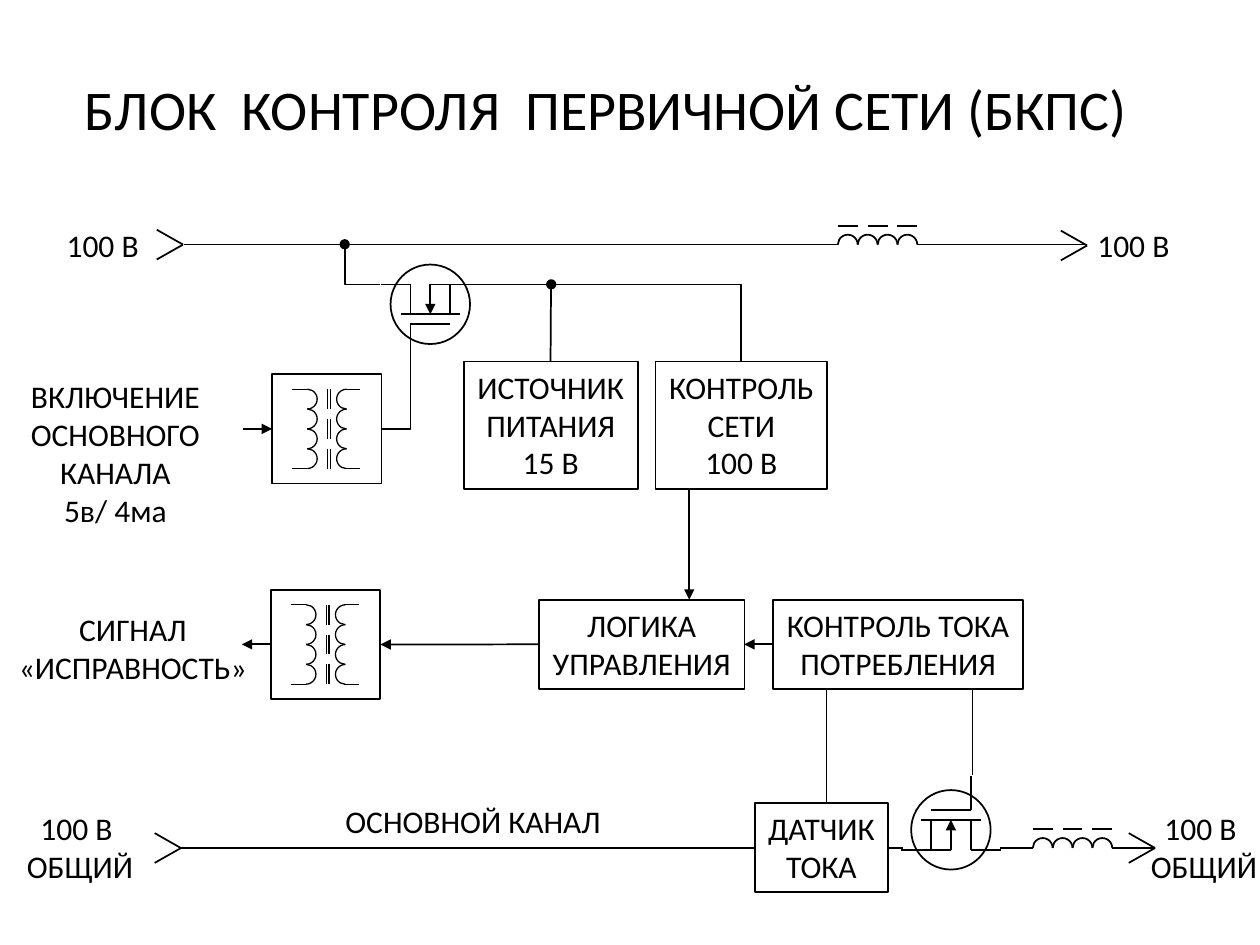
from dataclasses import dataclass

from lxml.etree import SubElement
from pptx import Presentation
from pptx.dml.color import RGBColor
from pptx.enum.shapes import MSO_CONNECTOR, MSO_SHAPE
from pptx.enum.text import MSO_ANCHOR, MSO_AUTO_SIZE, PP_ALIGN
from pptx.oxml.ns import qn
from pptx.util import Pt


@dataclass(frozen=True)
class Theme:
    font: str = "Calibri"
    ink: RGBColor = RGBColor(0, 0, 0)
    paper: RGBColor = RGBColor(255, 255, 255)
    title: float = 32
    body: float = 18
    thin: float = 0.75
    line: float = 1
    thick: float = 2


STEP = 11.35


class Board:
    def __init__(self, slide, theme):
        self.shapes = slide.shapes
        self.theme = theme

    def text(self, shape, lines, size, align=PP_ALIGN.CENTER):
        frame = shape.text_frame
        for at, words in enumerate(lines):
            para = frame.paragraphs[0] if at == 0 else frame.add_paragraph()
            para.alignment = align
            run = para.add_run()
            run.text = words
            run.font.name = self.theme.font
            run.font.size = Pt(size)
            run.font.color.rgb = self.theme.ink
        return frame

    def title(self, words, x, y, w, h):
        box = self.shapes.add_textbox(Pt(x), Pt(y), Pt(w), Pt(h))
        frame = self.text(box, [words], self.theme.title)
        frame.word_wrap = True
        frame.vertical_anchor = MSO_ANCHOR.MIDDLE

    def fit(self, shape, lines, align=PP_ALIGN.CENTER):
        frame = self.text(shape, lines, self.theme.body, align)
        frame.word_wrap = False
        frame.auto_size = MSO_AUTO_SIZE.SHAPE_TO_FIT_TEXT
        frame.vertical_anchor = MSO_ANCHOR.TOP

    def label(self, lines, x, y, w, h, align=PP_ALIGN.CENTER):
        box = self.shapes.add_textbox(Pt(x), Pt(y), Pt(w), Pt(h))
        self.fit(box, lines, align)

    def shape(self, kind, x, y, w, h, fill=None, width=None):
        item = self.shapes.add_shape(kind, Pt(x), Pt(y), Pt(w), Pt(h))
        item.shadow.inherit = False
        if fill is None:
            item.fill.background()
        else:
            item.fill.solid()
            item.fill.fore_color.rgb = fill
        item.line.color.rgb = self.theme.ink
        item.line.width = Pt(width or self.theme.line)
        return item

    def block(self, lines, x, y, w, h, fill=None):
        self.fit(self.shape(MSO_SHAPE.RECTANGLE, x, y, w, h, fill), lines)

    def line(self, x, y, x2, y2, width=None, head=False,
             kind=MSO_CONNECTOR.STRAIGHT):
        wire = self.shapes.add_connector(kind, Pt(x), Pt(y), Pt(x2), Pt(y2))
        wire.line.color.rgb = self.theme.ink
        wire.line.width = Pt(width or self.theme.line)
        props = wire._element.spPr
        if head:
            SubElement(props.find(qn("a:ln")), qn("a:tailEnd"),
                       type="triangle")
        SubElement(props, qn("a:effectLst"))
        return wire

    def bend(self, x, y, x2, y2):
        wire = self.line(x, y, x2, y2, kind=MSO_CONNECTOR.ELBOW)
        wire._element.spPr.find(qn("a:prstGeom")).set("prst", "bentConnector2")

    def arc(self, x, y, turn=0, width=None):
        item = self.shape(MSO_SHAPE.ARC, x, y, STEP, STEP, width=width)
        item.adjustments[0] = 108.165
        item.adjustments[1] = 0
        item.rotation = turn

    def dot(self, x, y):
        self.shape(MSO_SHAPE.OVAL, x - 1.9, y - 1.9, 3.8, 3.8,
                   self.theme.ink, self.theme.thick)

    def fork(self, x, y):
        for side in (-8.5, 8.5):
            self.line(x - 15, y + side, x, y)

    def choke(self, x, y):
        for at in range(4):
            self.arc(x + at * STEP, y - STEP / 2)
        for at in range(3):
            left = x + at * STEP * 1.5
            self.line(left, y - 10.8, left + STEP, y - 10.8)

    def gate(self, x, y, sign):
        self.shape(MSO_SHAPE.OVAL, x - 22.7, y - 22.7, 45.4, 45.4,
                   self.theme.paper)
        low, mid = -STEP, STEP / 2
        for a, b, c, d, head in (
            (-17, mid, 17, mid, False),
            (0, low, 0, mid, True),
            (STEP, mid, STEP, low, False),
            (low, mid, low, low, False),
            (low, STEP, STEP, STEP, False),
            (low, STEP, low, 30.6, False),
            (0, low, 28.4, low, False),
            (low, low, -28.4, low, False),
        ):
            self.line(x + sign * a, y + sign * b,
                      x + sign * c, y + sign * d, head=head)

    def trans(self, x, y):
        thin = self.theme.thin
        top = y + 8.6
        for left, turn in ((14.4, 90), (36.9, 270)):
            for at in range(4):
                self.arc(x + left, top + at * STEP, turn, thin)
        for left in (31.7, 33.2):
            for at in range(3):
                start = top + at * STEP * 1.5
                self.line(x + left, start, x + left, start + STEP, thin)
        for left in (11.5, 41.8):
            for level in (top, top + 4 * STEP):
                self.line(x + left, level, x + left + 8.6, level, thin)
        self.shape(MSO_SHAPE.RECTANGLE, x, y, 62.6, 62.6)


def main():
    deck = Presentation()
    deck.slide_width, deck.slide_height = Pt(720), Pt(540)
    theme = Theme()
    board = Board(deck.slides.add_slide(deck.slide_layouts[6]), theme)
    top, low = 139.8, 484.6

    board.title("БЛОК  КОНТРОЛЯ  ПЕРВИЧНОЙ СЕТИ (БКПС)", 22.5, 16.5, 648, 90)

    board.gate(245.9, 173.9, 1)
    board.gate(543.4, 474.2, -1)
    board.choke(478.8, top)
    board.choke(590.2, low)
    board.trans(155.5, 213.8)
    board.trans(154.8, 337)

    for x, y in ((104.6, top), (621.2, top + 0.5), (103.4, low), (660, low)):
        board.fork(x, y)

    for lines, *area in (
        (("ИСТОЧНИК", "ПИТАНИЯ", "15 В"), 265, 206.6, 99.4, 72.7),
        (("КОНТРОЛЬ", "СЕТИ", "100 В"), 374.6, 206.6, 98, 72.7),
        (("ЛОГИКА", "УПРАВЛЕНИЯ"), 308, 342.7, 117.4, 51),
        (("КОНТРОЛЬ ТОКА", "ПОТРЕБЛЕНИЯ"), 441.9, 342.7, 142.6, 51),
        (("ДАТЧИК", "ТОКА"), 431.5, 458.8, 75.8, 51, theme.paper),
    ):
        board.block(lines, *area)

    for lines, *area in (
        (("ВКЛЮЧЕНИЕ", "ОСНОВНОГО", "КАНАЛА", "5в/ 4ма"),
         9.8, 212, 112.3, 94.3),
        (("СИГНАЛ", "«ИСПРАВНОСТЬ»"), 2.9, 345, 146, 51),
        (("100 В ", "ОБЩИЙ"), 7.9, 458.6, 75.6, 51),
        (("100 В ", "ОБЩИЙ"), 650.2, 458.8, 75.6, 51),
        (("100 В",), 31, 125.5, 56, 29, PP_ALIGN.LEFT),
        (("100 В",), 620, 125.5, 56, 29, PP_ALIGN.LEFT),
        (("ОСНОВНОЙ КАНАЛ",), 190.3, 454.5, 162, 29, PP_ALIGN.LEFT),
    ):
        board.label(lines, *area)

    for wire in (
        (105, top, 478.8, top),
        (524.2, top, 620.6, top),
        (103.7, low, 431.5, low),
        (507.3, low, 516.2, low),
        (590.2, low, 571.7, low),
        (658.8, low, 635.6, low),
        (555.8, 443, 555.8, 393.1),
        (472.3, 458.8, 472.3, 393.1),
        (314.6, 206.6, 314.9, 162.6),
    ):
        board.line(*wire)

    for wire in (
        (441.9, 368.2, 425.2, 368.2),
        (393.9, 279.3, 393.9, 342.7),
        (308, 368.2, 217.4, 368.3),
        (154.8, 368.2, 138.2, 368.2),
        (139, 245.1, 155.5, 245.1),
    ):
        board.line(*wire, head=True)

    for wire in (
        (274.3, 162.6, 423.4, 206.6),
        (218.1, 245.1, 234.5, 204.5),
        (217.4, 162.6, 197, top),
    ):
        board.bend(*wire)

    board.dot(197, top - 0.2)
    board.dot(315, 162.5)
    deck.save("out.pptx")


if __name__ == "__main__":
    main()
